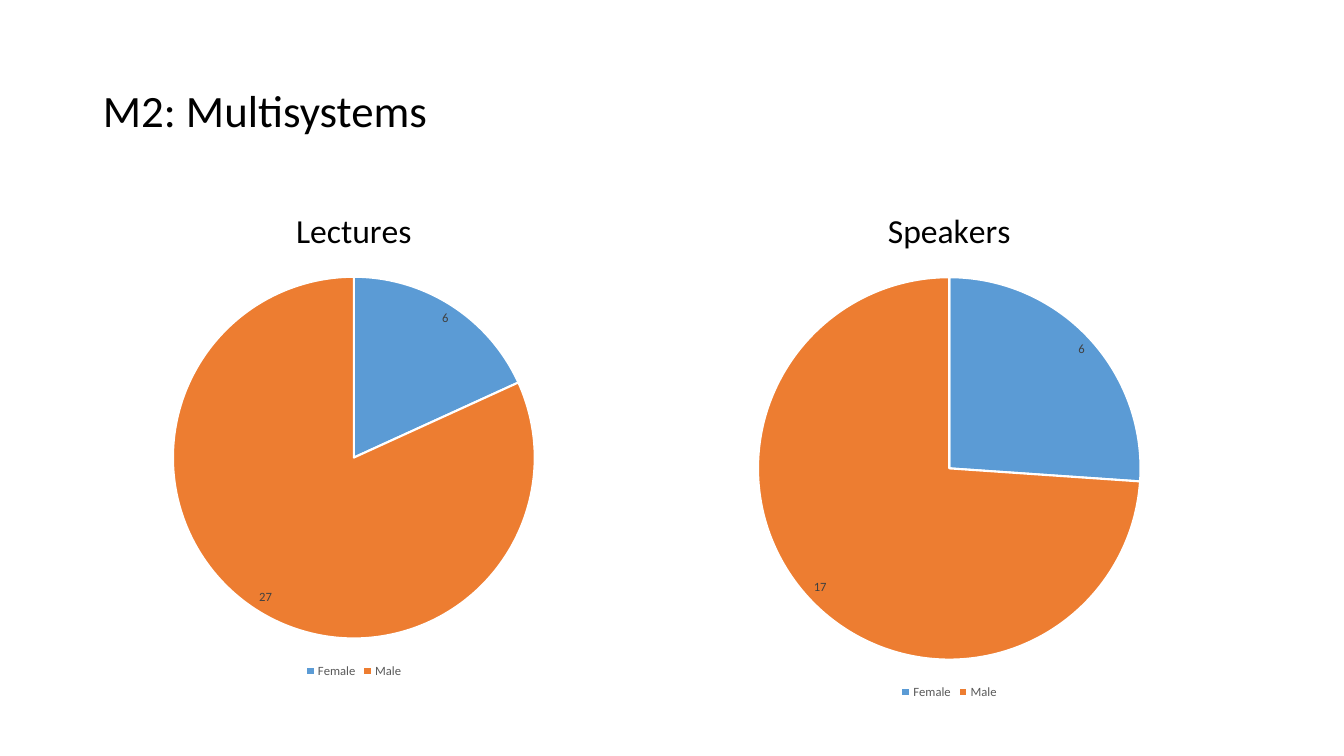
"""Build a slide that compares lectures and speakers by gender in two pie charts."""
from pptx import Presentation, util as u
from pptx.chart.data import CategoryChartData
from pptx.dml.color import RGBColor
from pptx.enum import chart as ch, text

FONT = "Calibri"
BLACK, WHITE, GREY, DARK = "000000", "FFFFFF", "595959", "404040"
GENDERS = {"Female": "5B9BD5", "Male": "ED7D31"}


def rgb(value):
    return RGBColor.from_string(value)


def set_font(font, size, color=BLACK):
    font.name = FONT
    font.size = u.Pt(size)
    font.bold = False
    font.color.rgb = rgb(color)


def write(tf, content, size, color=BLACK, align=None, spacing=None):
    p = tf.paragraphs[0]
    p.alignment = align
    p.line_spacing = spacing
    r = p.add_run()
    r.text = content
    set_font(r.font, size, color)


class Deck:
    def __init__(self):
        self.prs = Presentation()
        self.prs.slide_width = u.Inches(13.33)
        self.prs.slide_height = u.Inches(7.5)
        self.s = self.prs.slides.add_slide(self.prs.slide_layouts[5])

    def title(self, content, *box):
        sp = self.s.shapes.title
        sp.left, sp.top, sp.width, sp.height = map(u.Inches, box)
        tf = sp.text_frame
        tf.word_wrap = True
        tf.vertical_anchor = text.MSO_ANCHOR.MIDDLE
        write(tf, content, 32, align=text.PP_ALIGN.LEFT, spacing=0.9)

    def pie(self, heading, values, *box):
        data = CategoryChartData()
        data.categories = list(GENDERS)
        data.add_series("Series 1", values)
        chart = self.s.shapes.add_chart(
            ch.XL_CHART_TYPE.PIE, *map(u.Inches, box), data).chart
        set_font(chart.font, 10)
        chart.has_title = True
        write(chart.chart_title.text_frame, heading, 24)

        chart.has_legend = True
        chart.legend.position = ch.XL_LEGEND_POSITION.BOTTOM
        chart.legend.include_in_layout = False
        set_font(chart.legend.font, 9, GREY)

        plot = chart.plots[0]
        plot.vary_by_categories = True
        series = plot.series[0]
        labels = series.data_labels
        labels.show_value = True
        labels.show_percentage = False
        labels.position = ch.XL_LABEL_POSITION.INSIDE_END
        set_font(labels.font, 9, DARK)
        for i, color in enumerate(GENDERS.values()):
            fmt = series.points[i].format
            fmt.fill.solid()
            fmt.fill.fore_color.rgb = rgb(color)
            fmt.line.color.rgb = rgb(WHITE)
            fmt.line.width = u.Pt(1.5)


def main():
    deck = Deck()
    deck.title("M2: Multisystems", 0.92, 0.4, 11.5, 1.45)
    deck.pie("Lectures", (6, 27), 0.46, 1.85, 6.1, 4.92)
    deck.pie("Speakers", (6, 17), 6.42, 1.85, 5.99, 5.13)
    deck.prs.save("out.pptx")


if __name__ == "__main__":
    main()
